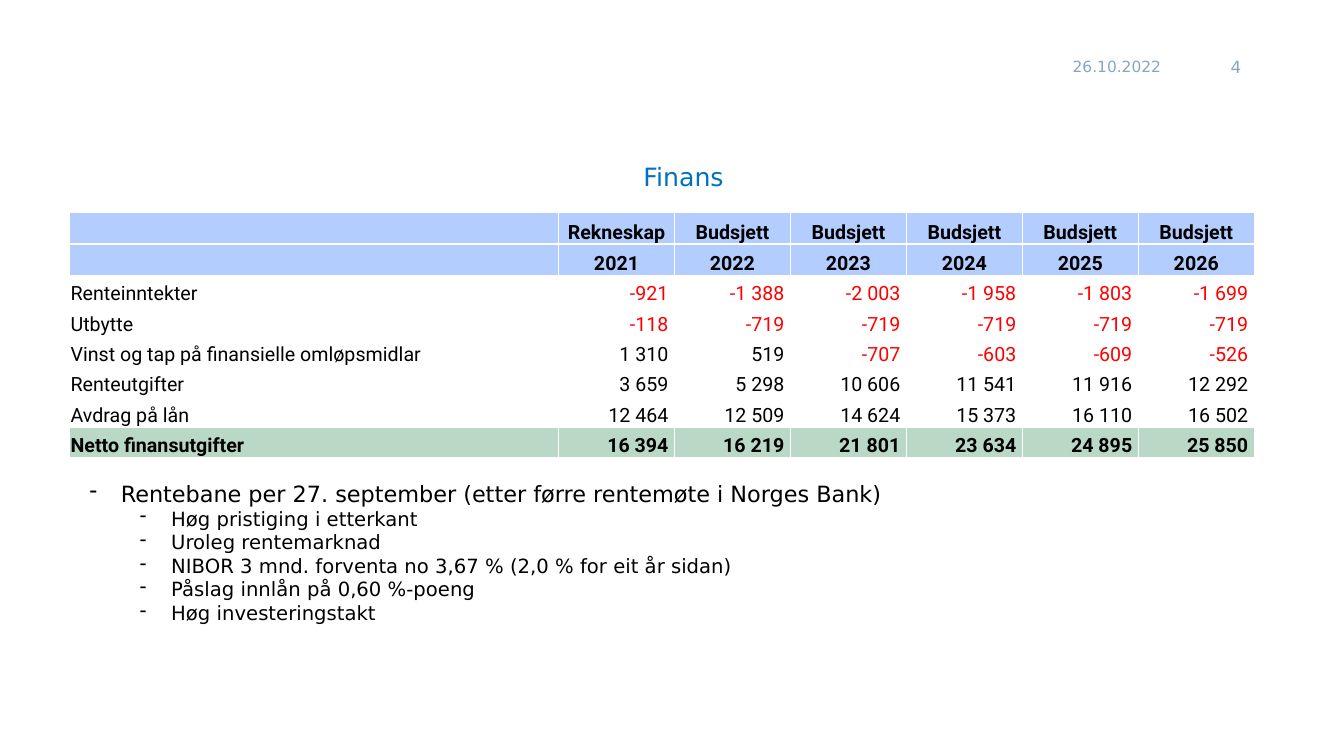
"""Build the Finans slide with its budget table and interest rate notes."""
from dataclasses import dataclass
from typing import Any, Optional

import lxml.etree
import pptx
import pptx.dml.color
import pptx.enum.text
import pptx.oxml.ns
import pptx.util

Inches = pptx.util.Inches
ALIGN = pptx.enum.text.PP_ALIGN
ANCHOR = pptx.enum.text.MSO_ANCHOR
AUTO = pptx.enum.text.MSO_AUTO_SIZE


@dataclass(frozen=True)
class Theme:
    body_font: str = "DejaVu Sans"
    table_font: str = "Roboto"
    text: str = "000000"
    muted: str = "86A7C2"
    title: str = "0070C0"
    negative: str = "FF0000"
    header_fill: str = "B4CDFF"
    total_fill: str = "B9D9C6"
    border: str = "FFFFFF"
    title_size: int = 18
    lead_size: int = 16
    detail_size: int = 14
    number_size: int = 12
    date_size: int = 11


@dataclass(frozen=True)
class Box:
    left: float
    top: float
    width: float
    height: float

    def lengths(self) -> tuple:
        return tuple(map(Inches, (self.left, self.top, self.width, self.height)))


@dataclass(frozen=True)
class Label:
    text: str
    box: Box
    size: int
    align: Any


@dataclass(frozen=True)
class BudgetRow:
    name: str
    amounts: tuple[int, ...]
    total: bool = False


@dataclass(frozen=True)
class Note:
    text: str
    level: int = 1


THEME = Theme()
TITLE_BOX = Box(2.38, 1.55, 8.8, 0.4)
NOTES_BOX = Box(0.79, 4.71, 11.54, 1.78)
TABLE_BOX = Box(0.69, 2.11, 11.75, 2.41)
YEAR_WIDTH = 1.15
LABELS = (
    Label("26.10.2022", Box(10.54, 0.46, 1.15, 0.4), THEME.date_size, ALIGN.LEFT),
    Label("4", Box(11.84, 0.46, 0.57, 0.4), THEME.number_size, ALIGN.RIGHT),
)
YEARS = range(2021, 2027)
ROWS = (
    BudgetRow("Renteinntekter", (-921, -1388, -2003, -1958, -1803, -1699)),
    BudgetRow("Utbytte", (-118, -719, -719, -719, -719, -719)),
    BudgetRow("Vinst og tap på finansielle omløpsmidlar", (1310, 519, -707, -603, -609, -526)),
    BudgetRow("Renteutgifter", (3659, 5298, 10606, 11541, 11916, 12292)),
    BudgetRow("Avdrag på lån", (12464, 12509, 14624, 15373, 16110, 16502)),
    BudgetRow("Netto finansutgifter", (16394, 16219, 21801, 23634, 24895, 25850), total=True),
)
NOTES = (
    Note("Rentebane per 27. september (etter førre rentemøte i Norges Bank)", level=0),
    Note("Høg pristiging i etterkant"),
    Note("Uroleg rentemarknad"),
    Note("NIBOR 3 mnd. forventa no 3,67 % (2,0 % for eit år sidan)"),
    Note("Påslag innlån på 0,60 %-poeng"),
    Note("Høg investeringstakt"),
)


def rgb(color: str) -> Any:
    return pptx.dml.color.RGBColor.from_string(color)


def add_element(parent: Any, tag: str, **attributes: str) -> Any:
    return lxml.etree.SubElement(parent, pptx.oxml.ns.qn(tag), attributes)


def write(p: Any, text: str, *, size: int, color: str = THEME.text, font: str = THEME.body_font,
          bold: bool = False, align: Any = ALIGN.LEFT) -> None:
    p.alignment = align
    r = p.add_run()
    r.text = text
    r.font.size = pptx.util.Pt(size)
    r.font.name = font
    r.font.bold = bold
    r.font.color.rgb = rgb(color)


def add_text_box(slide: Any, box: Box) -> Any:
    tf = slide.shapes.add_textbox(*box.lengths()).text_frame
    tf.word_wrap = True
    return tf


def add_title(slide: Any, text: str) -> None:
    sp = slide.shapes.title
    sp.left, sp.top, sp.width, sp.height = TITLE_BOX.lengths()
    tf = sp.text_frame
    tf.word_wrap = True
    tf.auto_size = AUTO.SHAPE_TO_FIT_TEXT
    tf.vertical_anchor = ANCHOR.TOP
    write(tf.paragraphs[0], text, size=THEME.title_size, color=THEME.title, align=ALIGN.CENTER)


def add_label(slide: Any, label: Label) -> None:
    tf = add_text_box(slide, label.box)
    tf.vertical_anchor = ANCHOR.MIDDLE
    write(tf.paragraphs[0], label.text, size=label.size, color=THEME.muted, align=label.align)


def add_notes(slide: Any) -> None:
    tf = add_text_box(slide, NOTES_BOX)
    tf.auto_size = AUTO.SHAPE_TO_FIT_TEXT
    for i, note in enumerate(NOTES):
        p = tf.add_paragraph() if i else tf.paragraphs[0]
        p.level = note.level
        properties = p._p.get_or_add_pPr()
        properties.set("marL", str(Inches(0.31 + 0.5 * note.level)))
        properties.set("indent", str(Inches(-0.31)))
        add_element(properties, "a:buFontTx")
        add_element(properties, "a:buChar", char="-")
        write(p, note.text, size=THEME.detail_size if note.level else THEME.lead_size)


def fill_cell(cell: Any, text: str, *, fill: Optional[str] = None, right: float = 0.01,
              **text_format: Any) -> None:
    cell.vertical_anchor = ANCHOR.BOTTOM
    cell.margin_left = cell.margin_top = Inches(0.01)
    cell.margin_right, cell.margin_bottom = Inches(right), 0
    properties = cell._tc.get_or_add_tcPr()
    for side in ("a:lnL", "a:lnR", "a:lnT", "a:lnB"):
        line = add_element(properties, side, w=str(pptx.util.Pt(1)))
        add_element(add_element(line, "a:solidFill"), "a:srgbClr", val=THEME.border)
    if fill:
        cell.fill.solid()
        cell.fill.fore_color.rgb = rgb(fill)
    else:
        cell.fill.background()
    write(cell.text_frame.paragraphs[0], text, size=THEME.detail_size, font=THEME.table_font,
          **text_format)


def add_budget_table(slide: Any) -> None:
    headers = (
        ("", "Rekneskap", *["Budsjett"] * (len(YEARS) - 1)),
        ("", *map(str, YEARS)),
    )
    row_count = len(headers) + len(ROWS)
    table = slide.shapes.add_table(row_count, len(YEARS) + 1, *TABLE_BOX.lengths()).table
    table.first_row = table.horz_banding = False
    for column in table.columns:
        column.width = Inches(YEAR_WIDTH)
    table.columns[0].width = Inches(TABLE_BOX.width - YEAR_WIDTH * len(YEARS))
    for row in table.rows:
        row.height = Inches(TABLE_BOX.height / row_count)

    for i, header in enumerate(headers):
        for j, text in enumerate(header):
            fill_cell(table.cell(i, j), text, fill=THEME.header_fill, bold=True,
                      align=ALIGN.CENTER)
    for i, row in enumerate(ROWS, len(headers)):
        fill = THEME.total_fill if row.total else None
        fill_cell(table.cell(i, 0), row.name, fill=fill, bold=row.total)
        for j, amount in enumerate(row.amounts, 1):
            fill_cell(table.cell(i, j), f"{amount:,}".replace(",", " "), fill=fill, right=0.06,
                      bold=row.total, align=ALIGN.RIGHT,
                      color=THEME.negative if amount < 0 else THEME.text)


def main() -> None:
    prs = pptx.Presentation()
    prs.slide_width, prs.slide_height = Inches(13.33), Inches(7.5)
    slide = prs.slides.add_slide(prs.slide_layouts[5])
    for label in LABELS:
        add_label(slide, label)
    add_title(slide, "Finans")
    add_notes(slide)
    add_budget_table(slide)
    prs.save("out.pptx")


if __name__ == "__main__":
    main()
